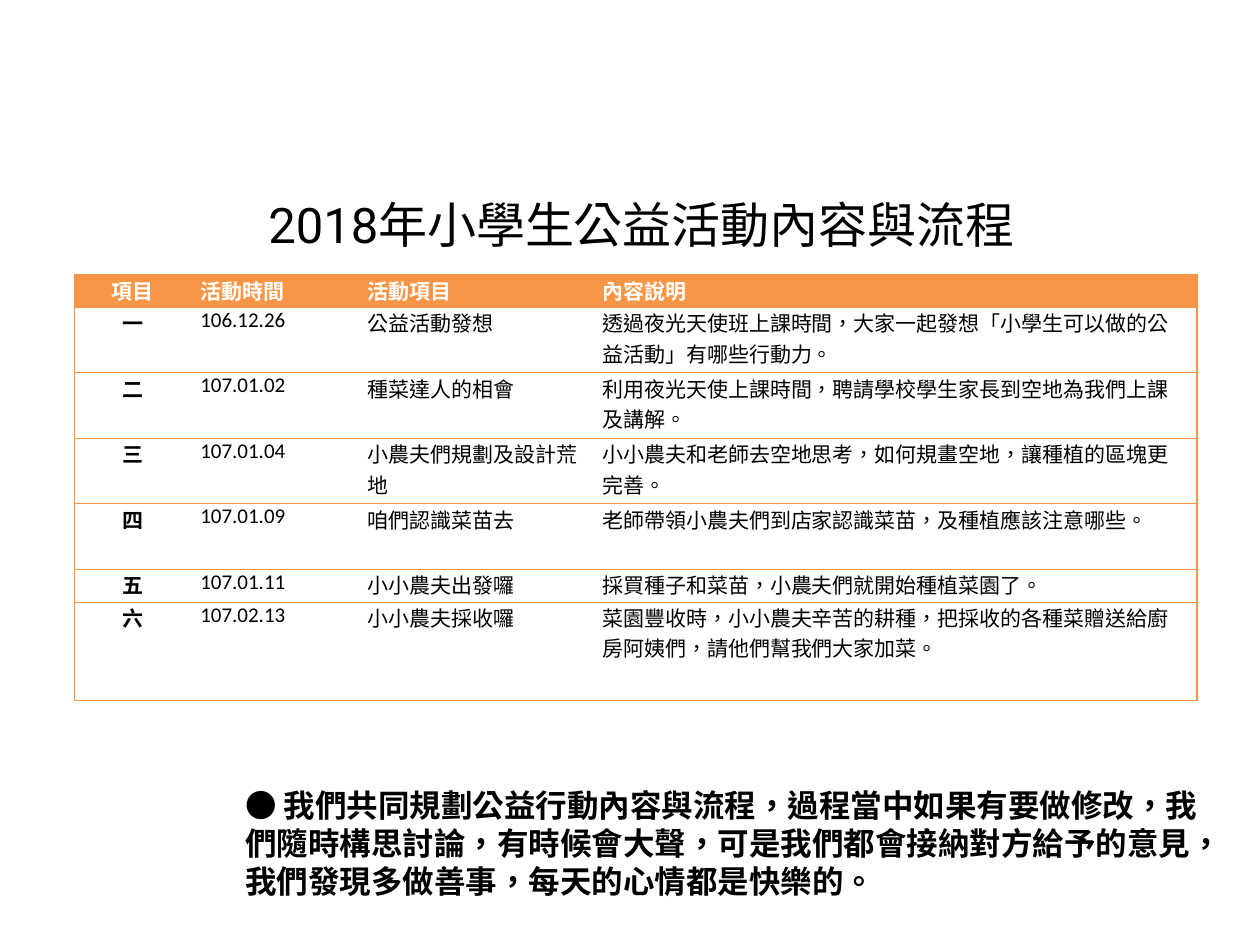
from lxml import etree
from pptx import Presentation
from pptx import util as u
from pptx.dml.color import RGBColor
from pptx.enum import lang, text
from pptx.oxml.ns import qn

ORANGE, BLACK, WHITE = "F69240", "000000", "FFFFFF"
HEADER_FILL = "F79646"
CJK_FONT = "Noto Sans CJK SC"
COLUMN_WIDTHS = [0.93, 1.33, 1.86, 4.79]
ROW_HEIGHTS = [0.26, 0.52, 0.52, 0.52, 0.52, 0.26, 0.78]
SCHEDULE = [
    ("項目", "活動時間", "活動項目", "內容說明"),
    ("一", "106.12.26", "公益活動發想",
     "透過夜光天使班上課時間，大家一起發想「小學生可以做的公益活動」有哪些行動力。"),
    ("二", "107.01.02", "種菜達人的相會",
     "利用夜光天使上課時間，聘請學校學生家長到空地為我們上課及講解。"),
    ("三", "107.01.04", "小農夫們規劃及設計荒地",
     "小小農夫和老師去空地思考，如何規畫空地，讓種植的區塊更完善。"),
    ("四", "107.01.09", "咱們認識菜苗去",
     "老師帶領小農夫們到店家認識菜苗，及種植應該注意哪些。"),
    ("五", "107.01.11", "小小農夫出發囉",
     "採買種子和菜苗，小農夫們就開始種植菜園了。"),
    ("六", "107.02.13", "小小農夫採收囉",
     "菜園豐收時，小小農夫辛苦的耕種，把採收的各種菜贈送給廚房阿姨們，請他們幫我們大家加菜。"),
]


def rgb(color):
    return RGBColor.from_string(color)


def add_run(paragraph, words, size, font, color=BLACK, bold=False):
    run = paragraph.add_run()
    run.text = words
    run.font.size = u.Pt(size)
    run.font.bold = bold
    run.font.name = font
    run.font.color.rgb = rgb(color)
    run.font.language_id = lang.MSO_LANGUAGE_ID.TRADITIONAL_CHINESE
    # East Asian typeface follows the Latin one
    latin = run.font._element.find(qn("a:latin"))
    east_asian = etree.Element(qn("a:ea"), typeface=CJK_FONT)
    latin.addnext(east_asian)


def add_text_frame(slide, left, top, width, height):
    box = slide.shapes.add_textbox(*map(u.Inches, (left, top, width, height)))
    box.text_frame.word_wrap = True
    return box.text_frame


def set_borders(cell, visible):
    properties = cell._tc.get_or_add_tcPr()
    for side in "LRTB":
        line = etree.SubElement(properties, qn(f"a:ln{side}"), w=str(u.Pt(0.75)))
        if side in visible:
            fill = etree.SubElement(line, qn("a:solidFill"))
            etree.SubElement(fill, qn("a:srgbClr"), val=ORANGE)
        else:
            etree.SubElement(line, qn("a:noFill"))


def fill_cell(cell, words, row, column):
    is_header = row == 0
    sides = "TB" + ("L" if column == 0 else "")
    sides += "R" if column == len(COLUMN_WIDTHS) - 1 else ""
    set_borders(cell, sides)
    cell.margin_left = cell.margin_right = u.Inches(0.07)
    cell.margin_top = cell.margin_bottom = 0
    if is_header:
        cell.fill.solid()
        cell.fill.fore_color.rgb = rgb(HEADER_FILL)
    else:
        cell.fill.background()
    paragraph = cell.text_frame.paragraphs[0]
    if column == 0:
        paragraph.alignment = text.PP_ALIGN.CENTER
    add_run(paragraph, words, 12, "Calibri", WHITE if is_header else BLACK,
            is_header or column == 0)


def add_schedule(slide):
    table = slide.shapes.add_table(
        len(ROW_HEIGHTS), len(COLUMN_WIDTHS), u.Inches(0.59), u.Inches(2.18),
        u.Inches(sum(COLUMN_WIDTHS)), u.Inches(sum(ROW_HEIGHTS))).table
    table.horz_banding = False
    for column, width in zip(table.columns, COLUMN_WIDTHS):
        column.width = u.Inches(width)
    for row, height in zip(table.rows, ROW_HEIGHTS):
        row.height = u.Inches(height)
    for r, entries in enumerate(SCHEDULE):
        for c, words in enumerate(entries):
            fill_cell(table.cell(r, c), words, r, c)


def add_title(slide):
    title = add_text_frame(slide, 0.59, 1.15, 9, 1.25)
    title.vertical_anchor = text.MSO_ANCHOR.MIDDLE
    heading = title.paragraphs[0]
    heading.alignment = text.PP_ALIGN.CENTER
    add_run(heading, "2018年小學生公益活動內容與流程", 28, "Roboto")


def add_reflection(slide):
    reflection = add_text_frame(slide, 1.85, 6.19, 7.87, 1.01).paragraphs[0]
    reflection.line_spacing = u.Pt(21.7)
    add_run(reflection, "● ", 18, CJK_FONT)
    add_run(reflection,
            "我們共同規劃公益行動內容與流程，過程當中如果有要做修改，"
            "我們隨時構思討論，有時候會大聲，可是我們都會接納對方給予的意見，"
            "我們發現多做善事，每天的心情都是快樂的。",
            18, CJK_FONT, bold=True)


def main():
    deck = Presentation()
    deck.slide_width, deck.slide_height = u.Inches(10), u.Inches(7.5)
    slide = deck.slides.add_slide(deck.slide_layouts[6])
    # Heading, activity schedule, closing thoughts
    add_title(slide)
    add_schedule(slide)
    add_reflection(slide)
    deck.save("out.pptx")


if __name__ == "__main__":
    main()
